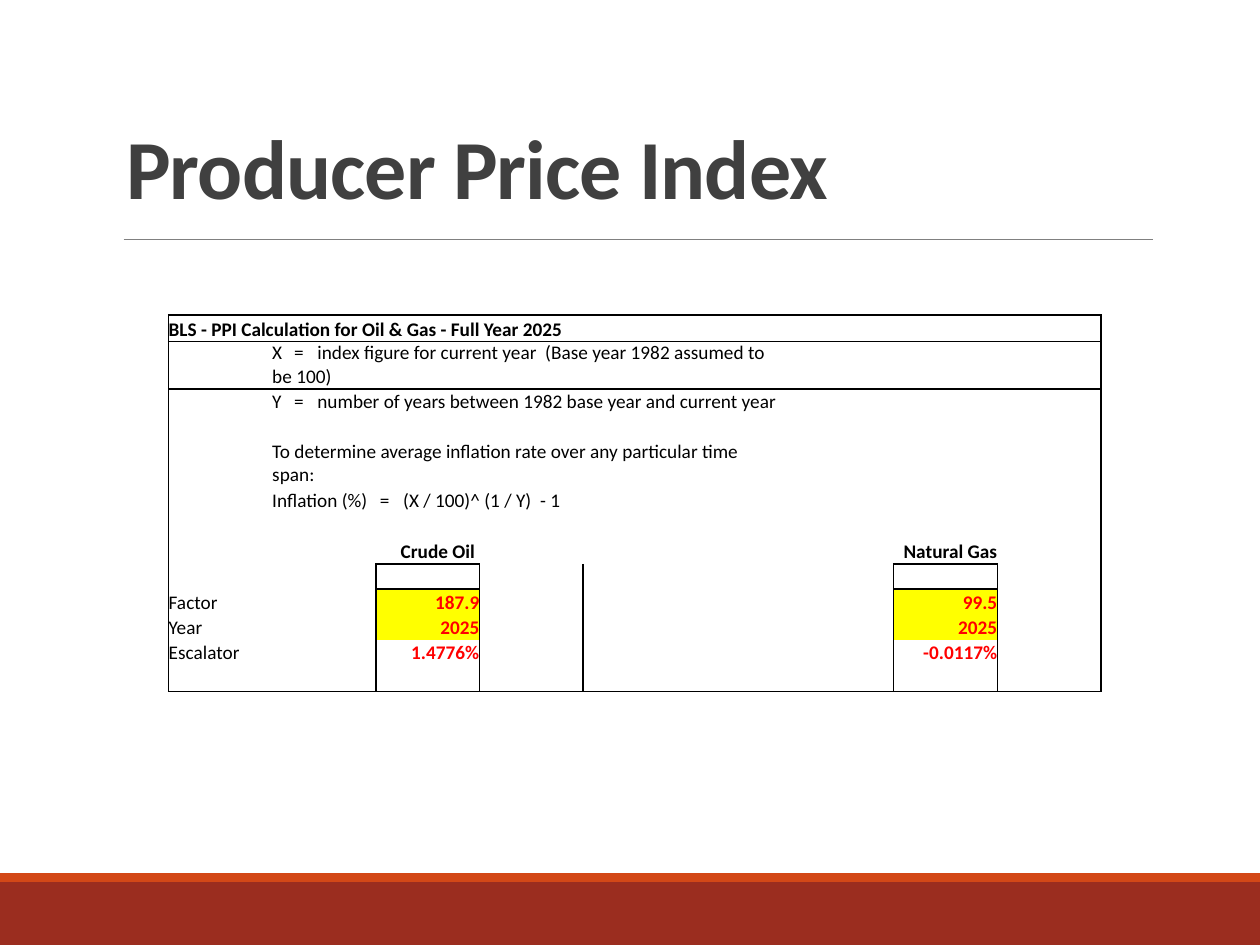
from collections import namedtuple
from dataclasses import dataclass

from lxml.etree import SubElement
from pptx import Presentation
from pptx.dml.color import RGBColor
from pptx.enum.shapes import MSO_CONNECTOR, MSO_SHAPE
from pptx.enum.text import MSO_ANCHOR, MSO_AUTO_SIZE, PP_ALIGN
from pptx.oxml.ns import qn
from pptx.util import Cm, Pt

Box = namedtuple("Box", "left top width height")
Entry = namedtuple("Entry", "text span bold color fill right tabs")


@dataclass(frozen=True)
class Theme:
    font: str = "Calibri"
    title: str = "404040"
    ink: str = "000000"
    paper: str = "FFFFFF"
    value: str = "FF0000"
    mark: str = "FFFF00"
    rule: str = "808080"
    band: str = "9B2D1F"
    strip: str = "D34817"
    head: int = 48
    body: int = 11
    thin: float = 0.5
    edge: int = 1


THEME = Theme()
NO_STYLE = "{2D5ABB26-0587-4C30-8999-92F81FD0307C}"
COLS = 9
ROWS = 13
TALL = (0, 7, 12)
FRAMES = [(0, 0, 0, 8), (1, 0, 12, 8), (8, 2, 12, 2), (8, 7, 12, 7)]
NOTES = {
    1: ("X\t=\tindex figure for current year  (Base year 1982 assumed to be 100)", 5, (0.44, 0.91)),
    2: ("Y\t=\tnumber of years between 1982 base year and current year", 5, (0.44, 0.91)),
    4: ("To determine average inflation rate over any particular time span:", 5, ()),
    5: ("Inflation (%)\t=\t(X / 100)^ (1 / Y)  - 1", 3, (2.17, 2.64)),
}
FIGURES = {
    9: ("Factor", "187.9", "99.5", THEME.mark),
    10: ("Year", "2025", "2025", THEME.mark),
    11: ("Escalator", "1.4776%", "-0.0117%", THEME.paper),
}


def color(code):
    return RGBColor.from_string(code)


def entry(text="", span=1, bold=False, ink=THEME.ink, fill=THEME.paper, right=False, tabs=()):
    return Entry(text, span, bold, ink, fill, right, tabs)


def add_run(para, text, size, ink, bold):
    run = para.add_run()
    run.text = text
    font = run.font
    font.name = THEME.font
    font.size = Pt(size)
    font.bold = bold
    font.color.rgb = color(ink)
    return run


def draw_bar(slide, box, fill):
    bar = slide.shapes.add_shape(MSO_SHAPE.RECTANGLE, *map(Cm, box))
    bar.shadow.inherit = False
    bar.fill.solid()
    bar.fill.fore_color.rgb = color(fill)
    bar.line.fill.background()


def draw_footer(slide, box):
    strip = 0.18
    draw_bar(slide, Box(box.left, box.top + strip, box.width, box.height - strip), THEME.band)
    draw_bar(slide, Box(box.left, box.top, box.width, strip), THEME.strip)


def draw_title(slide, box):
    title = slide.shapes.title
    title.left, title.top, title.width, title.height = map(Cm, box)
    frame = title.text_frame
    frame.auto_size = MSO_AUTO_SIZE.NONE
    frame.vertical_anchor = MSO_ANCHOR.BOTTOM
    para = frame.paragraphs[0]
    para.alignment = PP_ALIGN.LEFT
    para.line_spacing = 0.85
    run = add_run(para, "Producer Price Index", THEME.head, THEME.title, True)
    run.font._element.set("spc", "-50")
    left = Cm(box.left + 0.2)
    level = Cm(box.top + box.height + 0.33)
    line = slide.shapes.add_connector(
        MSO_CONNECTOR.STRAIGHT, left, level, Cm(box.left + box.width - 0.05), level)
    line.line.color.rgb = color(THEME.rule)
    line.line.width = Pt(THEME.thin)
    SubElement(line._element.spPr, qn("a:effectLst"))


def list_cells():
    cells = {(0, 0): entry("BLS - PPI Calculation for Oil & Gas - Full Year 2025", 4, True)}
    for row, (text, span, tabs) in NOTES.items():
        cells[row, 1] = entry(text, span, tabs=tabs)
    for col, text in ((1, "Crude Oil "), (6, "Natural Gas")):
        cells[7, col] = entry(text, 2, True, right=True)
    for row, (label, oil, gas, fill) in FIGURES.items():
        cells[row, 0] = entry(label)
        for col, text in ((2, oil), (7, gas)):
            cells[row, col] = entry(text, 1, True, THEME.value, fill, True)
    return cells


def find_edges():
    edges = set()
    for top, left, low, right in FRAMES:
        for col in range(left, right + 1):
            edges |= {("h", top, col), ("h", low + 1, col)}
        for row in range(top, low + 1):
            edges |= {("v", row, left), ("v", row, right + 1)}
    return edges


def draw_edge(props, tag):
    line = SubElement(props, qn(tag), w=str(Pt(THEME.edge)))
    fill = SubElement(line, qn("a:solidFill"))
    SubElement(fill, qn("a:srgbClr"), val=THEME.ink)


def fill_cell(cell, item):
    cell.margin_left = cell.margin_top = cell.margin_bottom = 0
    cell.margin_right = 0 if item.right else Cm(0.1)
    cell.vertical_anchor = MSO_ANCHOR.BOTTOM
    cell.fill.solid()
    cell.fill.fore_color.rgb = color(item.fill)
    para = cell.text_frame.paragraphs[0]
    if not item.text:
        SubElement(para._p, qn("a:endParaRPr"), sz=str(THEME.body * 100))
        return
    para.alignment = PP_ALIGN.RIGHT if item.right else PP_ALIGN.LEFT
    if item.tabs:
        stops = SubElement(para._p.get_or_add_pPr(), qn("a:tabLst"))
        for stop in item.tabs:
            SubElement(stops, qn("a:tab"), pos=str(Cm(stop)), algn="l")
    add_run(para, item.text, THEME.body, item.color, item.bold)


def draw_table(slide, box):
    table = slide.shapes.add_table(ROWS, COLS, *map(Cm, box)).table
    table.first_row = table.horz_banding = False
    table._tbl.tblPr.find(qn("a:tableStyleId")).text = NO_STYLE
    for col in table.columns:
        col.width = Cm(box.width / COLS)
    for num, row in enumerate(table.rows):
        row.height = Cm(0.53 if num in TALL else 0.51)
    cells = list_cells()
    edges = find_edges()
    for row in range(ROWS):
        for col in range(COLS):
            cell = table.cell(row, col)
            props = cell._tc.get_or_add_tcPr()
            sides = (("a:lnL", ("v", row, col)), ("a:lnR", ("v", row, col + 1)),
                     ("a:lnT", ("h", row, col)), ("a:lnB", ("h", row + 1, col)))
            for tag, edge in sides:
                if edge in edges:
                    draw_edge(props, tag)
            item = cells.get((row, col), entry())
            fill_cell(cell, item)
            if item.span > 1:
                cell.merge(table.cell(row, col + item.span - 1))


def main():
    deck = Presentation()
    deck.slide_width, deck.slide_height = Cm(25.4), Cm(19.05)
    slide = deck.slides.add_slide(deck.slide_layouts[5])
    draw_footer(slide, Box(0, 17.6, 25.4, 1.45))
    draw_title(slide, Box(2.29, 1.48, 21, 3.02))
    draw_table(slide, Box(3.4, 6.35, 18.8, 6.69))
    deck.save("out.pptx")


if __name__ == "__main__":
    main()
